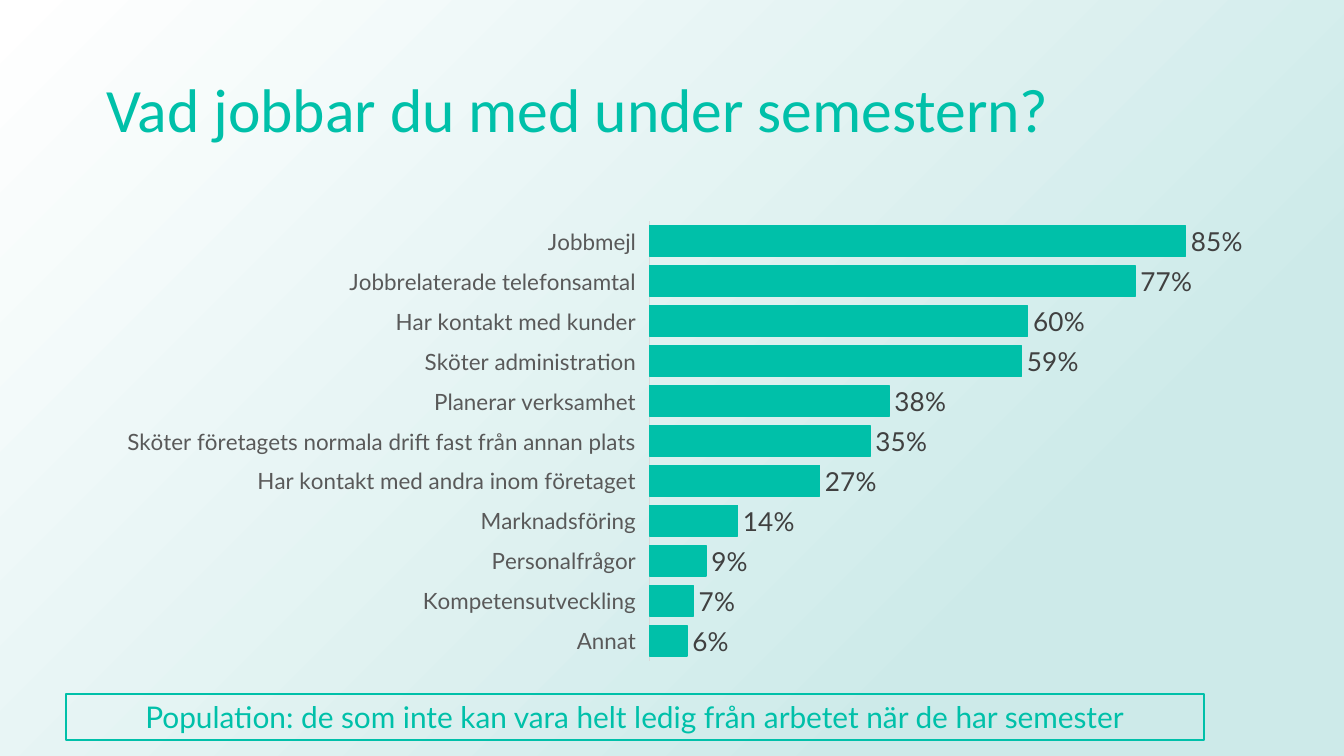
from pptx import Presentation
from pptx.chart.data import CategoryChartData
from pptx.dml.color import RGBColor
from pptx.enum.chart import XL_CHART_TYPE as ChartType
from pptx.enum.chart import XL_LABEL_POSITION as LabelPosition
from pptx.enum.chart import XL_TICK_LABEL_POSITION as TickLabels
from pptx.enum.chart import XL_TICK_MARK as TickMark
from pptx.enum.shapes import MSO_SHAPE as Shape
from pptx.enum.text import MSO_ANCHOR as Anchor
from pptx.enum.text import PP_ALIGN as Align
from pptx.oxml import parse_xml
from pptx.oxml.ns import nsdecls, qn
from pptx.util import Pt

PX = 914400 / 134.4
WIDTH, HEIGHT = 1344, 756

TEAL = RGBColor(0x00, 0xC0, 0xA9)
MIST = RGBColor(0xCD, 0xEA, 0xE9)
WHITE = RGBColor(0xFF, 0xFF, 0xFF)
AXIS_TEXT = RGBColor(0x59, 0x59, 0x59)
AXIS_LINE = RGBColor(0xD9, 0xD9, 0xD9)
LABEL_TEXT = RGBColor(0x40, 0x40, 0x40)

ANSWERS = {
    "Jobbmejl": 0.85,
    "Jobbrelaterade telefonsamtal": 0.77,
    "Har kontakt med kunder": 0.60,
    "Sköter administration": 0.59,
    "Planerar verksamhet": 0.38,
    "Sköter företagets normala drift fast från annan plats": 0.35,
    "Har kontakt med andra inom företaget": 0.27,
    "Marknadsföring": 0.14,
    "Personalfrågor": 0.09,
    "Kompetensutveckling": 0.07,
    "Annat": 0.06,
}


def emu(*lengths):
    return [round(length * PX) for length in lengths]


class SlideBuilder:
    title_font, body_font = "Calibri", "Lato"

    def __init__(self, page):
        self.page = page

    def style(self, font, name, size, color):
        font.name, font.size, font.color.rgb = name, Pt(size), color

    def rect(self, *place):
        box = self.page.shapes.add_shape(Shape.RECTANGLE, *emu(*place))
        box.shadow.inherit = False
        box.fill.background()
        box.line.fill.background()
        return box

    def backdrop(self, inner, outer):
        """Radial gradient spreading from the bottom right corner."""
        box = self.rect(0, 0, WIDTH, HEIGHT)
        box.fill.gradient()
        gradient = parse_xml(
            f'<a:gradFill {nsdecls("a")} rotWithShape="1"><a:gsLst>'
            f'<a:gs pos="23000"><a:srgbClr val="{inner}"/></a:gs>'
            f'<a:gs pos="100000"><a:srgbClr val="{outer}"/></a:gs></a:gsLst>'
            '<a:path path="circle"><a:fillToRect l="100000" t="100000"/></a:path>'
            '</a:gradFill>')
        properties = box.element.spPr
        properties.replace(properties.find(qn("a:gradFill")), gradient)

    def set_text(self, box, text, name, size, align):
        frame = box.text_frame
        frame.word_wrap = True
        frame.vertical_anchor = Anchor.MIDDLE
        frame.text = text
        para = frame.paragraphs[0]
        para.alignment = align
        self.style(para.runs[0].font, name, size, TEAL)
        return para

    def title(self, text, *place):
        box = self.page.shapes.add_textbox(*emu(*place))
        para = self.set_text(box, text, self.title_font, 33, Align.LEFT)
        para.line_spacing = 0.9

    def framed_note(self, text, *place):
        box = self.rect(*place)
        box.line.color.rgb = TEAL
        box.line.width = Pt(1)
        self.set_text(box, text, self.body_font, 16, Align.CENTER)

    def bar_chart(self, values, *place):
        data = CategoryChartData(number_format="0%")
        data.categories = list(values)
        data.add_series("Series 1", list(values.values()))
        chart = self.page.shapes.add_chart(
            ChartType.BAR_CLUSTERED, *emu(*place), data).chart
        chart.has_legend = chart.has_title = False
        self.style(chart.font, self.body_font, 14, LABEL_TEXT)

        # Axes
        names = chart.category_axis
        names.reverse_order = True
        names.has_major_gridlines = False
        names.major_tick_mark = names.minor_tick_mark = TickMark.NONE
        names.tick_label_position = TickLabels.LOW
        names.format.line.color.rgb = AXIS_LINE
        names.format.line.width = Pt(0.75)
        self.style(names.tick_labels.font, self.body_font, 12, AXIS_TEXT)
        scale = chart.value_axis
        scale.visible = scale.has_major_gridlines = False
        scale.minimum_scale, scale.maximum_scale = 0, 0.9

        # Bars and their labels
        plot = chart.plots[0]
        plot.gap_width = 30
        plot.vary_by_categories = False
        bars = plot.series[0].format
        bars.fill.solid()
        bars.fill.fore_color.rgb = bars.line.color.rgb = TEAL
        bars.line.width = Pt(0.75)
        labels = plot.series[0].data_labels
        labels.show_value = True
        labels.number_format, labels.number_format_is_linked = "0%", False
        labels.position = LabelPosition.OUTSIDE_END
        self.style(labels.font, self.body_font, 14, LABEL_TEXT)
        self.place_plot(chart, x=0.48, y=0.04, w=0.49, h=0.92)

    def place_plot(self, chart, **parts):
        modes = "".join(f'<c:{key}Mode val="edge"/>' for key in "xy")
        sizes = "".join(f'<c:{key} val="{part}"/>' for key, part in parts.items())
        layout = parse_xml(
            f'<c:layout {nsdecls("c")}><c:manualLayout>'
            f'<c:layoutTarget val="inner"/>{modes}{sizes}'
            '</c:manualLayout></c:layout>')
        area = chart.element.find(".//" + qn("c:plotArea"))
        for old in area.findall(qn("c:layout")):
            area.remove(old)
        area.insert(0, layout)


def main():
    deck = Presentation()
    deck.slide_width, deck.slide_height = emu(WIDTH, HEIGHT)
    builder = SlideBuilder(deck.slides.add_slide(deck.slide_layouts[6]))

    builder.backdrop(MIST, WHITE)
    builder.title("Vad jobbar du med under semestern?", 93, 40, 1159, 146)
    builder.framed_note(
        "Population: de som inte kan vara helt ledig från arbetet när de har semester",
        66, 694, 1138, 46)
    builder.bar_chart(ANSWERS, 93, 202, 1159, 478)

    deck.save("out.pptx")


if __name__ == "__main__":
    main()
